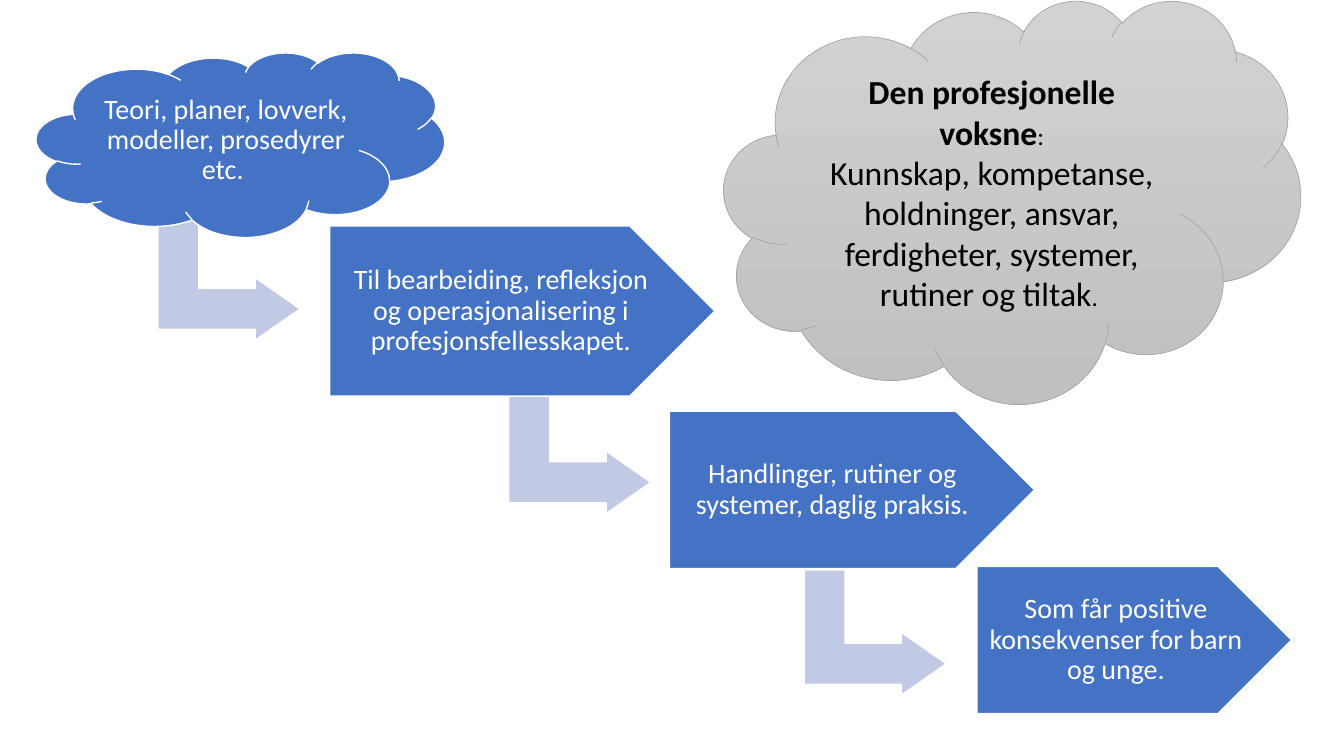
"""Builds a slide of steps from theory to daily practice, with a cloud on the professional adult."""
from pptx import Presentation
from pptx.dml.color import RGBColor
from pptx.enum.shapes import MSO_SHAPE
from pptx.enum.text import MSO_ANCHOR, PP_ALIGN
from pptx.util import Inches, Pt

CLOUD, PLATE, BENT = MSO_SHAPE.CLOUD, MSO_SHAPE.PENTAGON, MSO_SHAPE.BENT_UP_ARROW
MIDDLE, CENTER = MSO_ANCHOR.MIDDLE, PP_ALIGN.CENTER
BLUE = RGBColor(0x44, 0x72, 0xC4)
PALE = RGBColor(0xC1, 0xC9, 0xE4)
LIGHT = RGBColor(0xD2, 0xD2, 0xD2)
DARK = RGBColor(0xC0, 0xC0, 0xC0)
GREY = RGBColor(0xA5, 0xA5, 0xA5)
WHITE = RGBColor(0xFF, 0xFF, 0xFF)
BLACK = RGBColor(0, 0, 0)
FONT = "Calibri"

prs = Presentation()
prs.slide_width, prs.slide_height = Inches(13.33), Inches(7.5)
slide = prs.slides.add_slide(prs.slide_layouts[6])


def add_form(kind, box, fill, line, width):
    form = slide.shapes.add_shape(kind, *map(Inches, box))
    form.shadow.inherit = False
    if fill:
        form.fill.solid()
        form.fill.fore_color.rgb = fill
    form.line.color.rgb = line
    form.line.width = Pt(width)
    return form


def style(para, color):
    para.alignment = CENTER
    para.font.name = FONT
    para.font.color.rgb = color


steps = [
    (CLOUD, (0.36, 0.52, 4.05, 1.83), (1.65, 2.05),
     "Teori, planer, lovverk, modeller, prosedyrer etc. "),
    (PLATE, (3.27, 2.24, 3.82, 1.69), (5.13, 3.77),
     "Til bearbeiding, refleksjon og operasjonalisering i profesjonsfellesskapet."),
    (PLATE, (6.64, 4.08, 3.62, 1.56), (8.06, 5.57),
     "Handlinger, rutiner og systemer, daglig praksis."),
    (PLATE, (9.69, 5.62, 3.12, 1.46), None,
     "Som får positive konsekvenser for barn og unge."),
]
for kind, box, spot, text in steps:
    if spot:
        arrow = add_form(BENT, (*spot, 1.24, 1.41), PALE, WHITE, 1)
        arrow.rotation = 90
        for i, value in enumerate((0.328, 0.25, 0.358)):
            arrow.adjustments[i] = value
    step = add_form(kind, box, BLUE, WHITE, 1)
    frame = step.text_frame
    frame.word_wrap = True
    frame.vertical_anchor = MIDDLE
    frame.margin_left = frame.margin_right = Inches(0.08)
    frame.margin_top = frame.margin_bottom = Inches(0.08)
    para = frame.paragraphs[0]
    para.text = text
    para.line_spacing = 0.9
    style(para, WHITE)
    para.font.size = Pt(20)

adult = add_form(CLOUD, (7.18, 0, 5.72, 4), None, GREY, 0.5)
adult.fill.gradient()
adult.fill.gradient_angle = 270
for stop, color in zip(adult.fill.gradient_stops, (LIGHT, DARK)):
    stop.color.rgb = color
frame = adult.text_frame
frame.word_wrap = True
frame.vertical_anchor = MIDDLE
lines = [
    ("Den profesjonelle voksne", True, ":"),
    ("Kunnskap, kompetanse, holdninger, ansvar, ferdigheter, systemer, rutiner og tiltak",
     False, ". "),
]
for i, (text, bold, mark) in enumerate(lines):
    para = frame.add_paragraph() if i else frame.paragraphs[0]
    style(para, BLACK)
    for part, size, heavy in ((text, 24, bold), (mark, 18, False)):
        run = para.add_run()
        run.text = part
        run.font.size = Pt(size)
        run.font.bold = heavy

prs.save("out.pptx")
